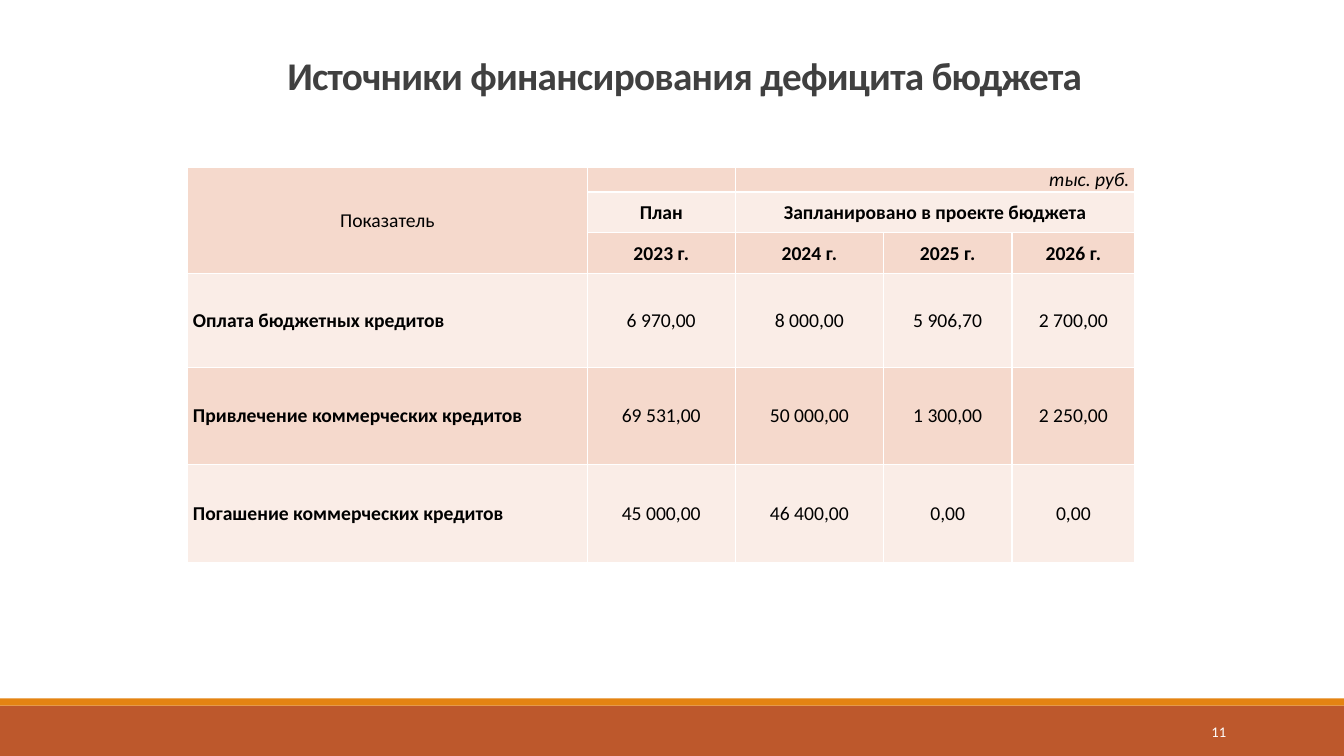
from lxml.etree import SubElement
from pptx import Presentation
from pptx.dml.color import RGBColor
from pptx.enum.shapes import MSO_SHAPE
from pptx.enum.text import MSO_ANCHOR, MSO_AUTO_SIZE, PP_ALIGN
from pptx.oxml.ns import qn
from pptx.util import Pt

WHITE = RGBColor(0xFF, 0xFF, 0xFF)
BLACK = RGBColor(0, 0, 0)
GRAPHITE = RGBColor(0x40, 0x40, 0x40)
RUST = RGBColor(0xBD, 0x58, 0x2C)
ORANGE = RGBColor(0xE4, 0x83, 0x12)
PEACH = RGBColor(0xF5, 0xD9, 0xCC)
PALE_PEACH = RGBColor(0xFA, 0xED, 0xE7)

SLIDE_WIDTH, SLIDE_HEIGHT = 960, 540
COLUMN_WIDTHS = [285.5, 105.8, 105.8, 91.8, 87.8]
ROW_HEIGHTS = [17, 29, 29.3, 67, 69.2, 70]
BUDGET = [
    ["Показатель", "", "тыс. руб. ", "", ""],
    ["", "План", "Запланировано в проекте бюджета", "", ""],
    ["", "2023 г.", "2024 г.", "2025 г.", "2026 г."],
    [" Оплата бюджетных кредитов", "6 970,00", "8 000,00", "5 906,70", "2 700,00"],
    [" Привлечение коммерческих кредитов", "69 531,00", "50 000,00", "1 300,00", "2 250,00"],
    [" Погашение коммерческих кредитов", "45 000,00", "46 400,00", "0,00", "0,00"],
]
MERGES = [((0, 0), (2, 0)), ((0, 2), (0, 4)), ((1, 2), (1, 4))]
CELL_FORMAT = {
    "margin_left": Pt(0.7),
    "margin_right": Pt(0.7),
    "margin_top": Pt(0.7),
    "margin_bottom": Pt(0),
    "vertical_anchor": MSO_ANCHOR.MIDDLE,
}


def apply_format(target, values):
    for name, value in values.items():
        setattr(target, name, value)


def write(paragraph, text, size, color, **style):
    run = paragraph.add_run()
    run.text = text
    apply_format(run.font, {"name": "Calibri", "size": Pt(size), **style})
    run.font.color.rgb = color
    return run


def add_band(slide, top, height, color):
    band = slide.shapes.add_shape(
        MSO_SHAPE.RECTANGLE, Pt(0), Pt(top), Pt(SLIDE_WIDTH), Pt(height))
    band.shadow.inherit = False
    band.fill.solid()
    band.fill.fore_color.rgb = color
    band.line.fill.background()


def add_page_number(slide, number):
    frame = slide.shapes.add_textbox(Pt(780), Pt(508.5), Pt(103), Pt(28.8)).text_frame
    apply_format(frame, {"word_wrap": True, "vertical_anchor": MSO_ANCHOR.MIDDLE})
    frame.paragraphs[0].alignment = PP_ALIGN.RIGHT
    write(frame.paragraphs[0], number, 10.5, WHITE)


def set_title(slide, text):
    title = slide.shapes.title
    apply_format(title, {"left": Pt(198), "top": Pt(30.2), "width": Pt(792), "height": Pt(44)})
    frame = title.text_frame
    apply_format(frame, {"word_wrap": True, "auto_size": MSO_AUTO_SIZE.NONE,
                         "vertical_anchor": MSO_ANCHOR.BOTTOM})
    heading = frame.paragraphs[0]
    apply_format(heading, {"alignment": PP_ALIGN.LEFT, "line_spacing": 0.85})
    run = write(heading, text, 28, GRAPHITE, bold=True)
    run.font._element.set("spc", "-50")


def set_borders(cell):
    properties = cell._tc.get_or_add_tcPr()
    for side in ("a:lnL", "a:lnR", "a:lnT", "a:lnB"):
        border = SubElement(properties, qn(side), w=str(Pt(1)))
        SubElement(SubElement(border, qn("a:solidFill")), qn("a:srgbClr"), val=str(WHITE))


def fill_cell(cell, text, row, column):
    set_borders(cell)
    apply_format(cell, CELL_FORMAT)
    cell.fill.solid()
    cell.fill.fore_color.rgb = PALE_PEACH if row % 2 else PEACH
    paragraph = cell.text_frame.paragraphs[0]
    if not text:
        SubElement(paragraph._p, qn("a:endParaRPr"), sz="1000")
        return
    is_unit = row == 0 and column > 0
    is_label = row > 2 and column == 0
    is_heading = row in (1, 2)
    paragraph.alignment = (PP_ALIGN.RIGHT if is_unit else
                           PP_ALIGN.LEFT if is_label else PP_ALIGN.CENTER)
    if is_unit:
        cell.vertical_anchor = MSO_ANCHOR.BOTTOM
    write(paragraph, text, 14, BLACK, bold=is_label or is_heading, italic=is_unit)


def add_budget_table(slide):
    table = slide.shapes.add_table(
        len(ROW_HEIGHTS), len(COLUMN_WIDTHS), Pt(134), Pt(119.6),
        Pt(sum(COLUMN_WIDTHS)), Pt(sum(ROW_HEIGHTS))).table
    apply_format(table, {"first_row": False, "horz_banding": False})
    for column, width in zip(table.columns, COLUMN_WIDTHS):
        column.width = Pt(width)
    for row, height in zip(table.rows, ROW_HEIGHTS):
        row.height = Pt(height)
    for row, texts in enumerate(BUDGET):
        for column, text in enumerate(texts):
            fill_cell(table.cell(row, column), text, row, column)
    for first, last in MERGES:
        table.cell(*first).merge(table.cell(*last))


def main():
    presentation = Presentation()
    apply_format(presentation, {"slide_width": Pt(SLIDE_WIDTH), "slide_height": Pt(SLIDE_HEIGHT)})
    slide = presentation.slides.add_slide(presentation.slide_layouts[5])
    add_band(slide, 504, 36, RUST)
    add_band(slide, 498.8, 5.2, ORANGE)
    add_page_number(slide, "11")
    set_title(slide, "Источники финансирования дефицита бюджета")
    add_budget_table(slide)
    presentation.save("out.pptx")


if __name__ == "__main__":
    main()
